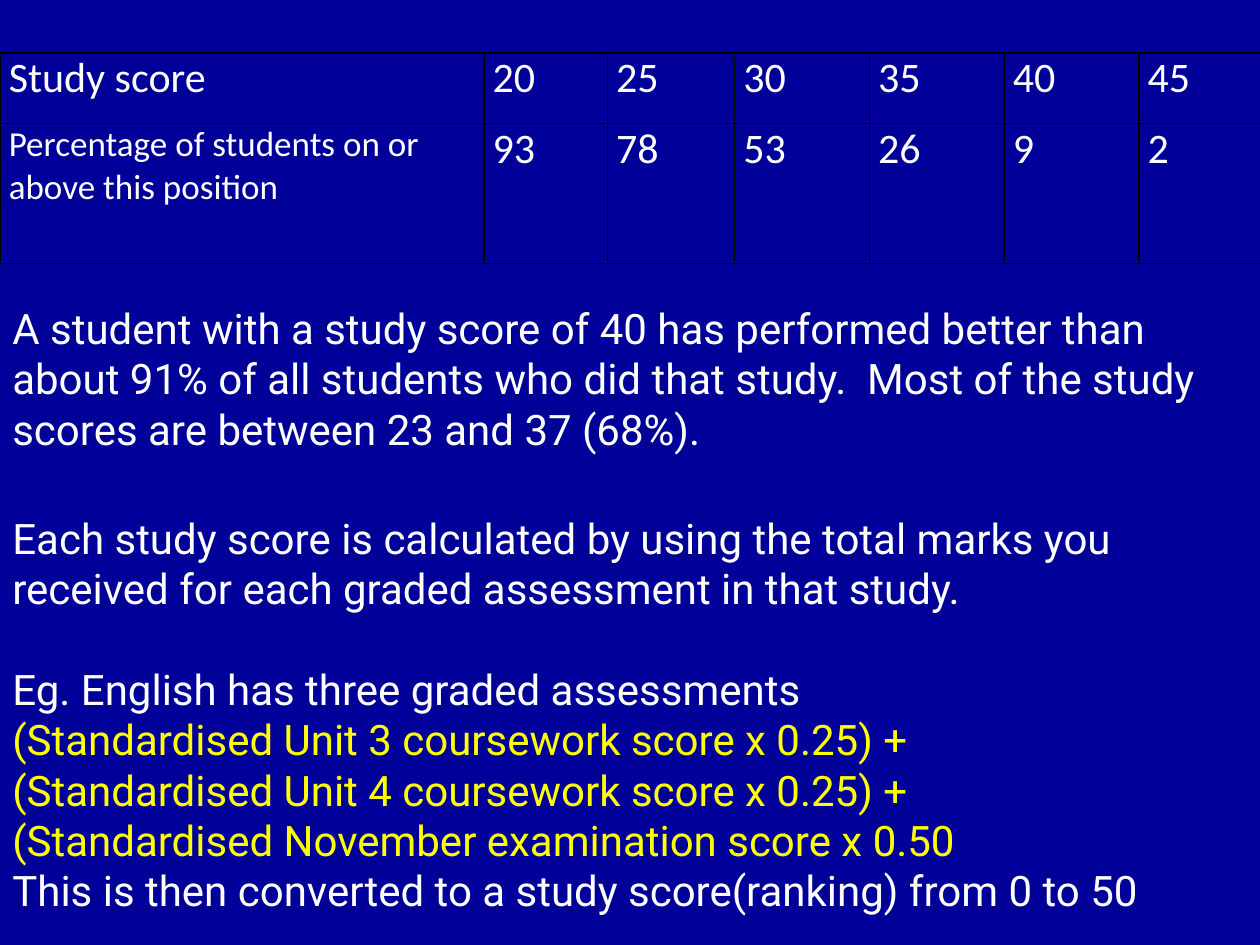
from lxml import etree
from pptx import Presentation
from pptx.dml.color import RGBColor
from pptx.oxml.ns import qn
from pptx.util import Inches, Pt

WHITE, YELLOW, NAVY, BLACK = "FFFFFF", "FFFF00", "000099", "000000"

COLUMN_WIDTHS = [3.84, 0.98, 1.01, 1.07, 1.07, 1.07, 0.97]
ROW_HEIGHTS = [0.56, 1.11]
SCORES = [
    ["Study score", "20", "25", "30", "35", "40", "45"],
    ["Percentage of students on or above this position",
     "93", "78", "53", "26", "9", "2"],
]

# Text, colour, space before in points
EXPLANATION = [
    ("A student with a study score of 40 has performed better than about 91% "
     "of all students who did that study.  Most of the study scores are "
     "between 23 and 37 (68%).", WHITE, 0),
    ("Each study score is calculated by using the total marks you received "
     "for each graded assessment in that study.", WHITE, 33.5),
    ("Eg. English has three graded assessments", WHITE, 28.8),
    ("(Standardised Unit 3 coursework score x 0.25) +", YELLOW, 0),
    ("(Standardised Unit 4 coursework score x 0.25) +", YELLOW, 0),
    ("(Standardised November examination score x 0.50", YELLOW, 0),
    ("This is then converted to a study score(ranking) from 0 to 50", WHITE, 0),
]


def rgb(color):
    return RGBColor.from_string(color)


def format_runs(p, font, size, color):
    for r in p.runs:
        r.font.name = font
        r.font.size = Pt(size)
        r.font.color.rgb = rgb(color)


def set_borders(cell, color, width):
    tc_pr = cell._tc.get_or_add_tcPr()
    for i, side in enumerate(("lnL", "lnR", "lnT", "lnB")):
        ln = etree.Element(qn(f"a:{side}"), w=str(Pt(width)))
        fill = etree.SubElement(ln, qn("a:solidFill"))
        etree.SubElement(fill, qn("a:srgbClr"), val=color)
        tc_pr.insert(i, ln)


def fill_cell(cell, text, size):
    cell.margin_left = cell.margin_right = Inches(0.07)
    cell.margin_top = cell.margin_bottom = 0
    cell.fill.background()
    set_borders(cell, BLACK, 1)
    cell.text_frame.text = text
    format_runs(cell.text_frame.paragraphs[0], "Calibri", size, WHITE)


def add_score_table(s):
    table = s.shapes.add_table(
        len(ROW_HEIGHTS), len(COLUMN_WIDTHS), 0, Inches(0.42),
        Inches(10), Inches(sum(ROW_HEIGHTS))).table
    table.first_row = table.horz_banding = False
    for column, width in zip(table.columns, COLUMN_WIDTHS):
        column.width = Inches(width)
    for row, height in zip(table.rows, ROW_HEIGHTS):
        row.height = Inches(height)
    for i, texts in enumerate(SCORES):
        for j, text in enumerate(texts):
            # The long row heading is set smaller
            fill_cell(table.cell(i, j), text, 20 if (i, j) == (1, 0) else 24)


def add_explanation(s):
    tf = s.shapes.add_textbox(0, Inches(2.35), Inches(10), Inches(4.95)).text_frame
    tf.word_wrap = True
    for i, (text, color, space) in enumerate(EXPLANATION):
        p = tf.add_paragraph() if i else tf.paragraphs[0]
        p.text = text
        p.space_before = Pt(space)
        format_runs(p, "Roboto", 24, color)


def main():
    prs = Presentation()
    prs.slide_width, prs.slide_height = Inches(10), Inches(7.5)
    s = prs.slides.add_slide(prs.slide_layouts[6])

    # Background
    s.background.fill.solid()
    s.background.fill.fore_color.rgb = rgb(NAVY)

    add_explanation(s)
    add_score_table(s)
    prs.save("out.pptx")


if __name__ == "__main__":
    main()
